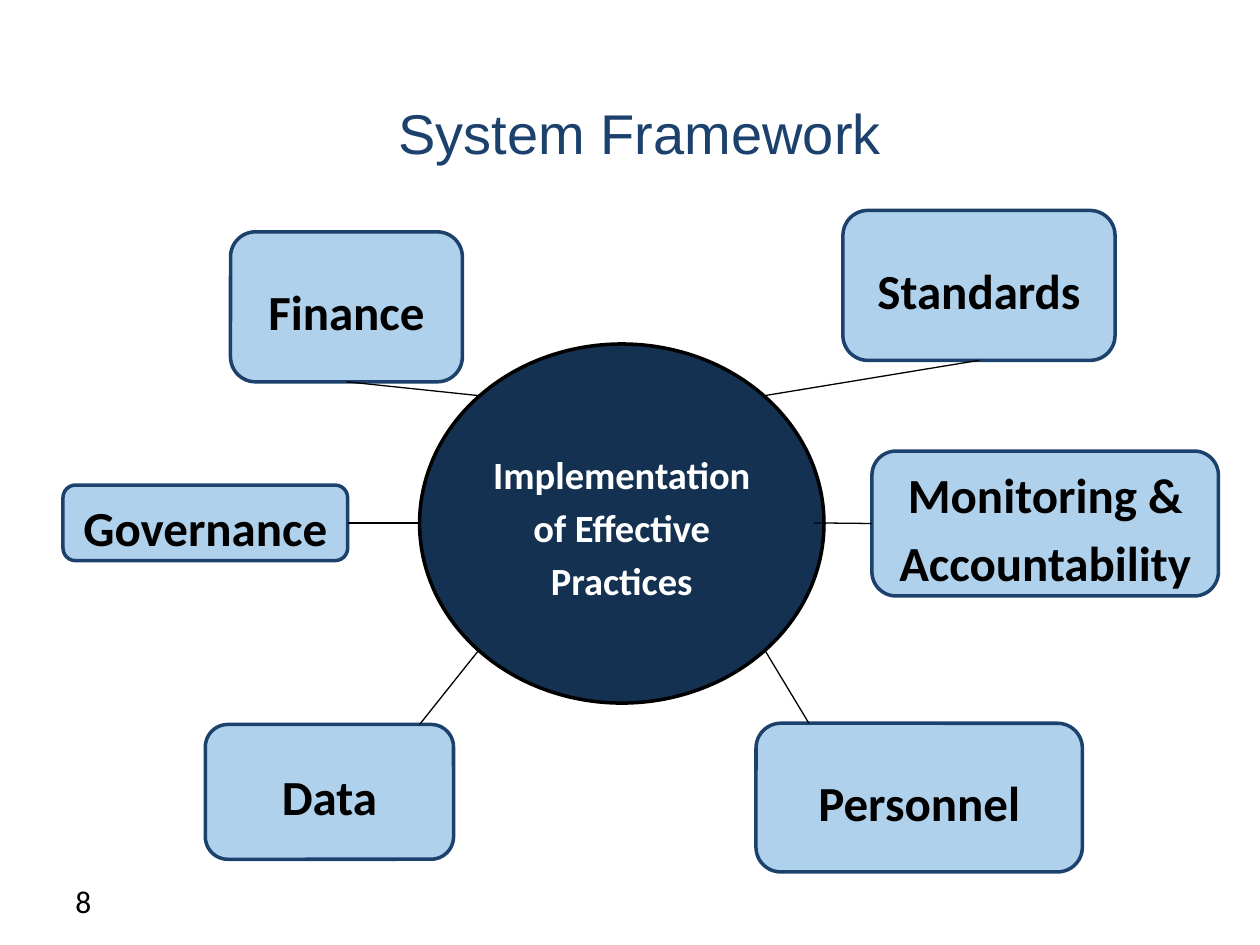
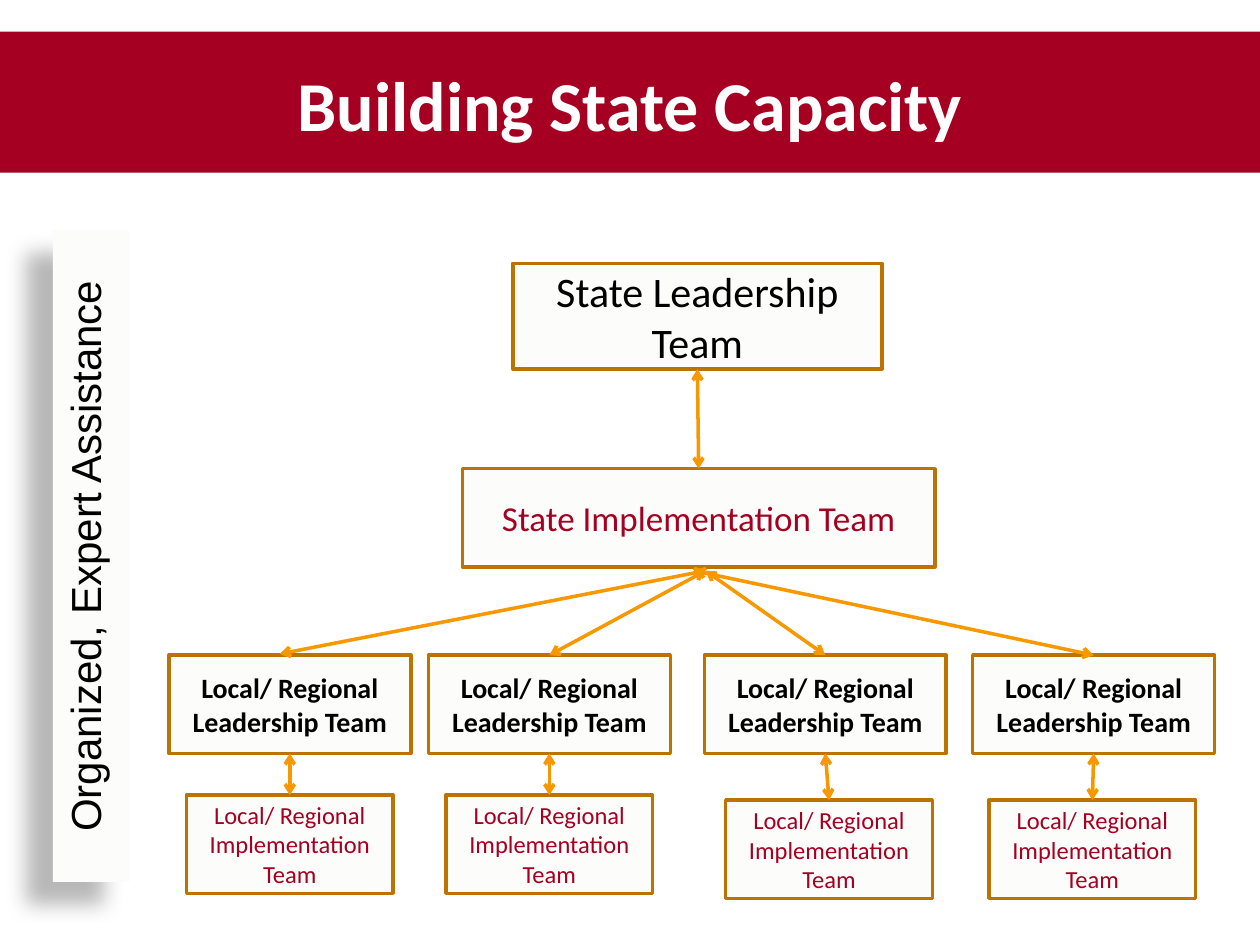
from lxml.etree import SubElement
from pptx import Presentation
from pptx.dml.color import RGBColor
from pptx.enum.shapes import MSO_CONNECTOR as Connector, MSO_SHAPE as Shape
from pptx.enum.text import MSO_ANCHOR as Anchor, PP_ALIGN as Align
from pptx.oxml.ns import qn
from pptx.util import Pt

# Shared scale, fonts and colours
PX = 9144  # 100 px to the inch
HEAD_FONT, BODY_FONT = "Arial", "Calibri"
BLACK, WHITE = "000000", "FFFFFF"
NAVY, DEEP_NAVY, SKY = "1B416C", "143151", "B0D1EB"
CRIMSON, IVORY, BRONZE, ORANGE = "A50021", "FCFCFA", "BC7300", "F89800"
TOP, LEFT, BOTTOM, RIGHT = range(4)


def color(code):
    return RGBColor.from_string(code)


class Painter:
    """Holds the deck, its style and the page being drawn."""

    def __init__(self):
        self.deck = Presentation()
        self.deck.slide_width = 1000 * PX
        self.deck.slide_height = 750 * PX
        self.page = None

    def new_page(self):
        self.page = self.deck.slides.add_slide(self.deck.slide_layouts[6])

    def add_text(self, box, text, size, ink=BLACK, bold=False, font=BODY_FONT,
                 align=Align.CENTER, anchor=Anchor.MIDDLE, spaced=False):
        frame = box.text_frame
        frame.word_wrap = True
        frame.vertical_anchor = anchor
        para = frame.paragraphs[0]
        para.alignment = align
        if spaced:
            para.line_spacing = 1.15
            para.space_after = Pt(10)
        span = para.add_run()
        span.text = text
        span.font.name = font
        span.font.size = Pt(size)
        span.font.bold = bold
        span.font.color.rgb = color(ink)

    def label(self, area, text, size, **style):
        box = self.page.shapes.add_textbox(*(n * PX for n in area))
        self.add_text(box, text, size, **style)

    def block(self, kind, area, fill, edge, text, size, **style):
        box = self.page.shapes.add_shape(kind, *(n * PX for n in area))
        box.shadow.inherit = False
        box.fill.solid()
        box.fill.fore_color.rgb = color(fill)
        if edge:
            box.line.color.rgb = color(edge)
            box.line.width = Pt(2)
        else:
            box.line.fill.background()
        self.add_text(box, text, size, **style)
        return box

    def topic(self, area, text):
        return self.block(Shape.ROUNDED_RECTANGLE, area, SKY, NAVY, text, 28,
                          bold=True, spaced=True)

    def team(self, area, text, size, **style):
        return self.block(Shape.RECTANGLE, area, IVORY, BRONZE, text, size, **style)

    def cast_shadow(self, box, blur, distance, degrees, opacity):
        effects = box._element.spPr.find(qn("a:effectLst"))
        shade = SubElement(effects, qn("a:outerShdw"), blurRad=str(Pt(blur)),
                           dist=str(Pt(distance)), dir=str(degrees * 60000),
                           algn="ctr", rotWithShape="0")
        tint = SubElement(shade, qn("a:srgbClr"), val=BLACK)
        SubElement(tint, qn("a:alpha"), val=str(opacity * 1000))

    def line(self, start, end, ink=BLACK, width=0.75, arrows=False):
        """Each end is a point (x, y) or a joined side (box, side)."""
        spots = [(0, 0) if hasattr(spot[0], "text_frame") else spot
                 for spot in (start, end)]
        link = self.page.shapes.add_connector(
            Connector.STRAIGHT, *(n * PX for spot in spots for n in spot))
        if spots[0] is not start:
            link.begin_connect(*start)
        if spots[1] is not end:
            link.end_connect(*end)
        link.line.color.rgb = color(ink)
        link.line.width = Pt(width)
        outline = link._element.spPr.find(qn("a:ln"))
        if arrows:
            for tag in ("a:headEnd", "a:tailEnd"):
                SubElement(outline, qn(tag), type="arrow")
        SubElement(link._element.spPr, qn("a:effectLst"))

    def arrow(self, start, end):
        self.line(start, end, ORANGE, 2, arrows=True)


def draw_framework(painter):
    painter.new_page()
    painter.label((58, 67, 900, 75), "System Framework", 32, ink=NAVY, font=HEAD_FONT)

    # Hub and its six topics
    painter.block(Shape.OVAL, (333, 273, 321, 285), DEEP_NAVY, BLACK,
                  "Implementation of Effective Practices", 22,
                  ink=WHITE, bold=True, spaced=True)
    finance = painter.topic((183, 184, 184, 119), "Finance")
    governance = painter.topic((50, 385, 226, 60), "Governance")
    painter.topic((163, 575, 197, 107), "Data")
    standards = painter.topic((669, 167, 216, 119), "Standards")
    monitoring = painter.topic((692, 358, 275, 115), "Monitoring & Accountability")
    painter.topic((600, 574, 259, 118), "Personnel")

    # Spokes
    for start, end in (
        ((finance, BOTTOM), (380, 314)),
        ((governance, RIGHT), (333, 415)),
        ((333, 575), (380, 516)),
        ((standards, BOTTOM), (607, 314)),
        ((646, 415), (monitoring, LEFT)),
        ((607, 516), (642, 574)),
    ):
        painter.line(start, end)

    # Page number
    painter.label((50, 695, 233, 40), "8", 18, align=Align.LEFT, anchor=Anchor.TOP)


def draw_capacity(painter):
    painter.new_page()

    # Title band
    band = painter.block(Shape.RECTANGLE, (0, 25, 1000, 112), CRIMSON, None,
                         "Building State Capacity", 40, ink=WHITE, bold=True,
                         anchor=Anchor.TOP)
    band.text_frame.margin_top = 24 * PX

    # Vertical side label
    side = painter.block(Shape.RECTANGLE, (42, 183, 61, 517), IVORY, None,
                         "Organized, Expert Assistance", 24, font=HEAD_FONT,
                         anchor=Anchor.TOP)
    side.text_frame._txBody.bodyPr.set("vert", "vert270")
    painter.cast_shadow(side, blur=11.8, distance=19.7, degrees=141, opacity=28)

    # State teams
    leaders = painter.team((407, 209, 293, 84), "State Leadership Team", 24)
    doers = painter.team((367, 372, 375, 78), "State Implementation Team", 20, ink=CRIMSON)
    painter.arrow((leaders, BOTTOM), (doers, TOP))

    # Local teams: leadership left, implementation left and top, fan start
    for lead_left, work_left, work_top, fan_x in (
        (134, 148, 631, 560),
        (340, 354, 631, 560),
        (559, 576, 635, 560),
        (772, 785, 635, 551),
    ):
        lead = painter.team((lead_left, 520, 192, 78),
                            "Local/ Regional Leadership Team", 16, bold=True)
        work = painter.team((work_left, work_top, 164, 78),
                            "Local/ Regional Implementation Team", 14, ink=CRIMSON)
        # The first fan arrow lands left of its box's middle
        target = (222, 519) if lead_left == 134 else (lead, TOP)
        painter.arrow((fan_x, 453), target)
        painter.arrow((lead, BOTTOM), (work, TOP))


def main():
    painter = Painter()
    draw_framework(painter)
    draw_capacity(painter)
    painter.deck.save("out.pptx")


if __name__ == "__main__":
    main()
